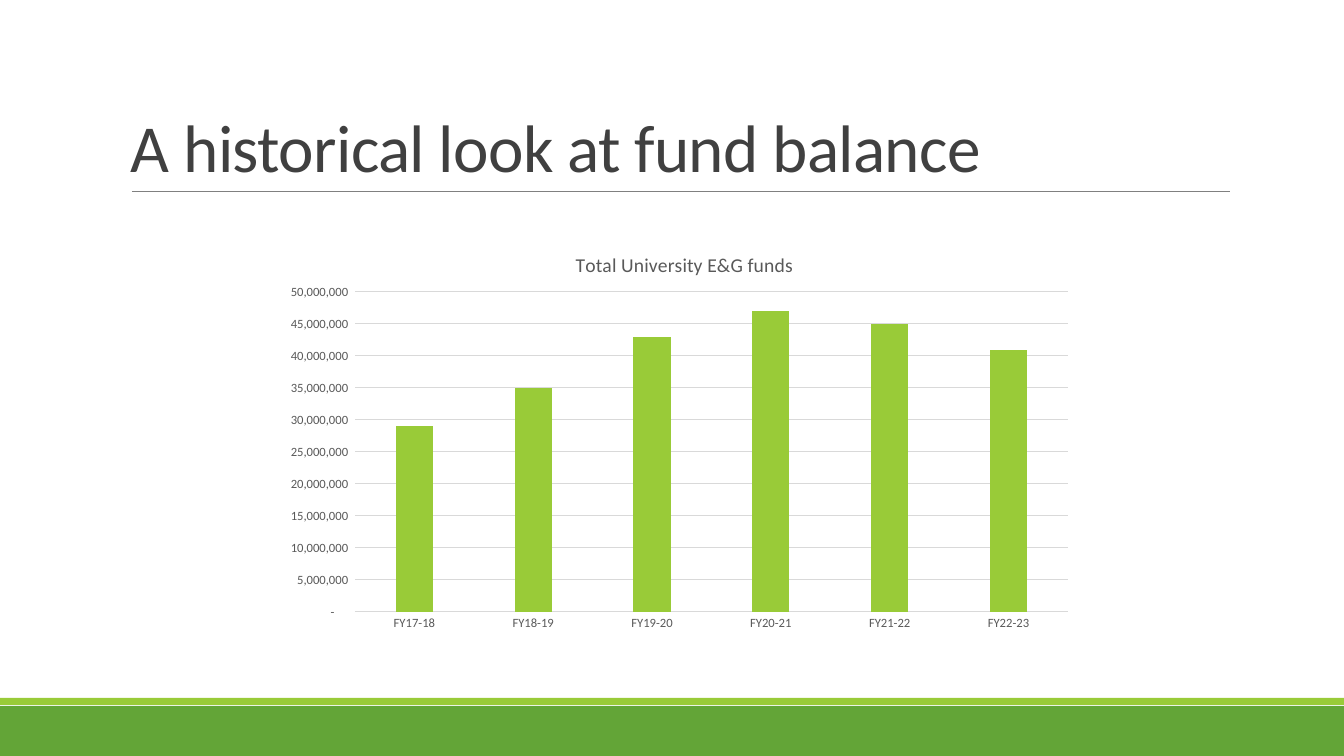
from dataclasses import dataclass

from lxml.etree import SubElement
from pptx import Presentation
from pptx.chart.data import CategoryChartData
from pptx.dml.color import RGBColor
from pptx.enum.chart import XL_CHART_TYPE, XL_TICK_MARK
from pptx.enum.shapes import MSO_CONNECTOR, MSO_SHAPE
from pptx.enum.text import MSO_ANCHOR
from pptx.oxml.ns import qn
from pptx.util import Emu, Pt


@dataclass(frozen=True)
class Theme:
    font: str = "Calibri"
    lime: str = "99CB38"
    green: str = "63A537"
    heading: str = "404040"
    label: str = "595959"
    rule: str = "808080"
    grid: str = "D9D9D9"
    heading_size: int = 48
    caption_size: int = 14
    label_size: int = 9


def px(length):
    return Emu(round(length * 914400 / 100.8))


def rgb(color):
    return RGBColor.from_string(color)


class SlideBuilder:
    def __init__(self, slide, theme):
        self.shapes = slide.shapes
        self.theme = theme

    def style(self, font, size, color):
        font.name = self.theme.font
        font.size = Pt(size)
        font.bold = False
        font.color.rgb = rgb(color)

    def stroke(self, line, color, width):
        line.color.rgb = rgb(color)
        line.width = Pt(width)

    def band(self, left, top, width, height, color):
        band = self.shapes.add_shape(
            MSO_SHAPE.RECTANGLE, px(left), px(top), px(width), px(height))
        band.shadow.inherit = False
        band.fill.solid()
        band.fill.fore_color.rgb = rgb(color)
        band.line.fill.background()

    def rule(self, left, right, y):
        rule = self.shapes.add_connector(
            MSO_CONNECTOR.STRAIGHT, px(left), px(y), px(right), px(y))
        self.stroke(rule.line, self.theme.rule, 0.5)
        SubElement(rule._element.spPr, qn("a:effectLst"))

    def heading(self, left, top, width, height, text):
        box = self.shapes.add_textbox(px(left), px(top), px(width), px(height))
        frame = box.text_frame
        frame.word_wrap = True
        frame.vertical_anchor = MSO_ANCHOR.BOTTOM
        paragraph = frame.paragraphs[0]
        paragraph.line_spacing = 0.85
        run = paragraph.add_run()
        run.text = text
        self.style(run.font, self.theme.heading_size, self.theme.heading)
        run.font._element.set("spc", "-50")

    def place(self, element, index, **fractions):
        """Fix the place of a chart part, in fractions of the chart."""
        for old in element.findall(qn("c:layout")):
            element.remove(old)
        layout = SubElement(element, qn("c:layout"))
        element.insert(index, layout)
        manual = SubElement(layout, qn("c:manualLayout"))
        if "w" in fractions:
            SubElement(manual, qn("c:layoutTarget")).set("val", "inner")
        for side in ("xMode", "yMode"):
            SubElement(manual, qn(f"c:{side}")).set("val", "edge")
        for key, fraction in fractions.items():
            SubElement(manual, qn(f"c:{key}")).set("val", str(fraction))

    def column_chart(self, left, top, width, height, caption, name, funds):
        theme = self.theme
        data = CategoryChartData(number_format="#,##0")
        data.categories = list(funds)
        data.add_series(name, list(funds.values()))
        chart = self.shapes.add_chart(
            XL_CHART_TYPE.COLUMN_CLUSTERED,
            px(left), px(top), px(width), px(height), data).chart
        self.style(chart.font, theme.label_size, theme.label)
        chart.has_legend = False

        # Caption and plot area
        chart.has_title = True
        run = chart.chart_title.text_frame.paragraphs[0].add_run()
        run.text = caption
        self.style(run.font, theme.caption_size, theme.label)
        self.place(chart.chart_title._element, 1, x=0.37, y=0.05)
        plot_area = chart._chartSpace.chart.plotArea
        self.place(plot_area, 0, x=0.1023, y=0.1578, w=0.8792, h=0.7767)

        # Columns
        plot = chart.plots[0]
        plot.gap_width = 219
        plot.overlap = -27
        plot.vary_by_categories = False
        columns = plot.series[0].format.fill
        columns.solid()
        columns.fore_color.rgb = rgb(theme.lime)

        # Axes
        years, amounts = chart.category_axis, chart.value_axis
        for axis in (years, amounts):
            axis.major_tick_mark = axis.minor_tick_mark = XL_TICK_MARK.NONE
            self.style(axis.tick_labels.font, theme.label_size, theme.label)
        self.stroke(years.format.line, theme.grid, 0.75)
        amounts.format.line.fill.background()
        amounts.has_major_gridlines = True
        self.stroke(amounts.major_gridlines.format.line, theme.grid, 0.75)
        amounts.minimum_scale, amounts.maximum_scale = 0, 50_000_000
        amounts.major_unit = 5_000_000
        amounts.tick_labels.number_format = (
            r'_(* #,##0_);_(* \(#,##0\);_(* "-"??_);_(@_)')
        amounts.tick_labels.number_format_is_linked = False


def main():
    deck = Presentation()
    deck.slide_width, deck.slide_height = px(1344), px(756)
    theme = Theme()
    builder = SlideBuilder(deck.slides.add_slide(deck.slide_layouts[6]), theme)

    # Footer bands
    builder.band(0, 706, 1344, 50, theme.green)
    builder.band(0, 698, 1344, 7, theme.lime)

    # Heading
    builder.rule(132, 1230, 191)
    builder.heading(121, 31, 1109, 160, "A historical look at fund balance")

    # Fund balance by fiscal year
    funds = {
        "FY17-18": 29_000_000,
        "FY18-19": 35_000_000,
        "FY19-20": 43_000_000,
        "FY20-21": 47_000_000,
        "FY21-22": 45_000_000,
        "FY22-23": 41_000_000,
    }
    builder.column_chart(272, 227, 811, 412, "Total University E&G funds",
                         "Series 1", funds)

    deck.save("out.pptx")


if __name__ == "__main__":
    main()
